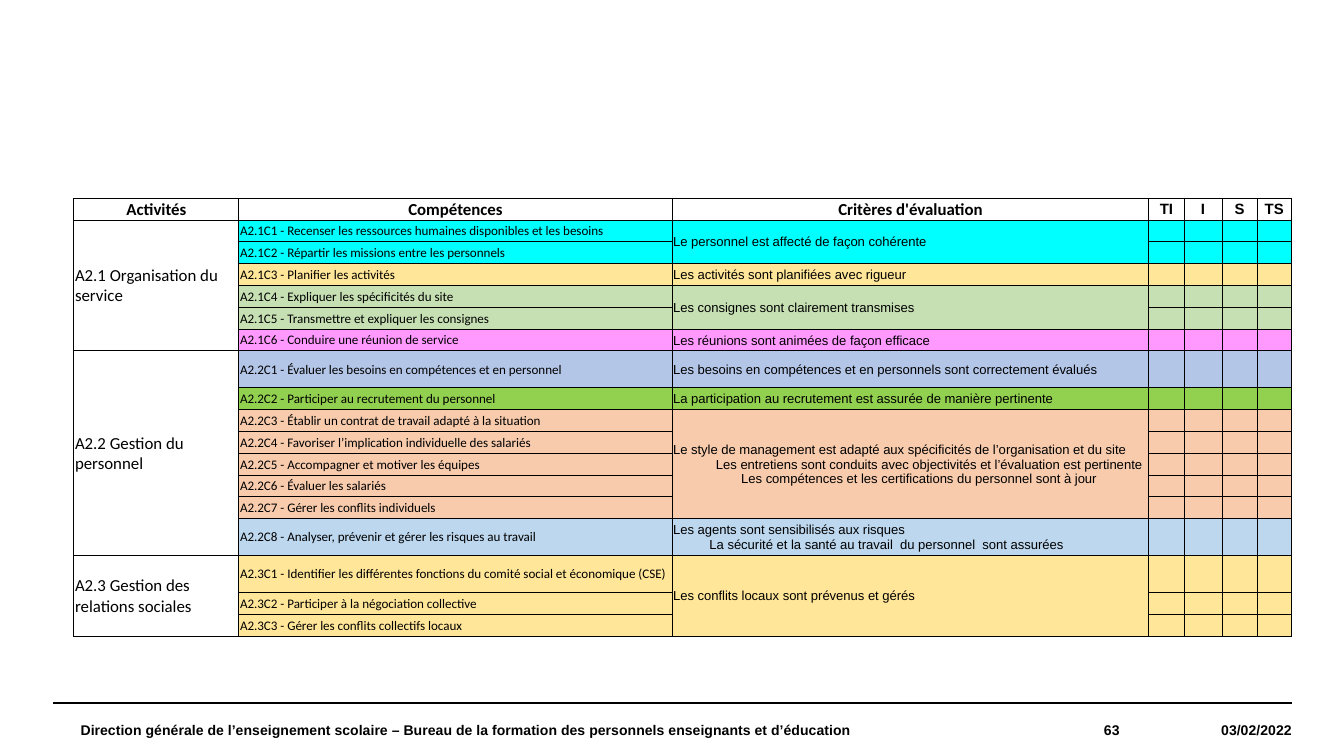
from lxml import etree
from pptx import Presentation
from pptx.dml.color import RGBColor
from pptx.enum.shapes import MSO_CONNECTOR
from pptx.enum.text import MSO_ANCHOR as ANCHOR, PP_ALIGN as ALIGN
from pptx.oxml.ns import qn
from pptx.util import Pt

BLACK = RGBColor(0, 0, 0)
WHITE = RGBColor(255, 255, 255)
CYAN = RGBColor(0x00, 0xFF, 0xFF)
YELLOW = RGBColor(0xFF, 0xE6, 0x99)
SAGE = RGBColor(0xC6, 0xE0, 0xB4)
PINK = RGBColor(0xFF, 0x99, 0xFF)
PERIWINKLE = RGBColor(0xB4, 0xC6, 0xE7)
GREEN = RGBColor(0x92, 0xD0, 0x50)
PEACH = RGBColor(0xF8, 0xCB, 0xAD)
SKY = RGBColor(0xBD, 0xD7, 0xEE)

COLUMNS = [88.4, 232, 255.5, 18.8, 20.4, 18.8, 18.4]
ROW, TALL_ROW = 11.7, 19.8
TALL_ROWS = (7, 14, 15)
HEADERS = ["Activités", "Compétences", "Critères d'évaluation", "TI", "I", "S", "TS"]

# Activity -> groups of (colour, skills, criteria as (indent, text))
ACTIVITIES = [
    ("A2.1 Organisation du service", [
        (CYAN, ["A2.1C1 - Recenser les ressources humaines disponibles et les besoins",
                "A2.1C2 - Répartir les missions entre les personnels"],
         [(0, "Le personnel est affecté de façon cohérente")]),
        (YELLOW, ["A2.1C3 - Planifier les activités"],
         [(0, "Les activités sont planifiées avec rigueur")]),
        (SAGE, ["A2.1C4 - Expliquer les spécificités du site",
                "A2.1C5 - Transmettre et expliquer les consignes"],
         [(0, "Les consignes sont clairement transmises")]),
        (PINK, ["A2.1C6 - Conduire une réunion de service"],
         [(0, "Les réunions sont animées de façon efficace")]),
    ]),
    ("A2.2 Gestion du personnel", [
        (PERIWINKLE, ["A2.2C1 - Évaluer les besoins en compétences et en personnel"],
         [(0, "Les besoins en compétences et en personnels sont correctement évalués")]),
        (GREEN, ["A2.2C2 - Participer au recrutement du personnel"],
         [(0, "La participation au recrutement est assurée de manière pertinente")]),
        (PEACH, ["A2.2C3 - Établir un contrat de travail adapté à la situation",
                 "A2.2C4 - Favoriser l’implication individuelle des salariés",
                 "A2.2C5 - Accompagner et motiver les équipes",
                 "A2.2C6 - Évaluer les salariés",
                 "A2.2C7 - Gérer les conflits individuels"],
         [(0, "Le style de management est adapté aux spécificités de l’organisation et du site"),
          (23, "Les entretiens sont conduits avec objectivités et l’évaluation est pertinente"),
          (36.5, "Les compétences et les certifications du personnel sont à jour")]),
        (SKY, ["A2.2C8 - Analyser, prévenir et gérer les risques au travail"],
         [(0, "Les agents sont sensibilisés aux risques"),
          (19.5, "La sécurité et la santé au travail  du personnel  sont assurées")]),
    ]),
    ("A2.3 Gestion des relations sociales", [
        (YELLOW, ["A2.3C1 - Identifier les différentes fonctions du comité social et "
                  "économique (CSE)",
                  "A2.3C2 - Participer à la négociation collective",
                  "A2.3C3 - Gérer les conflits collectifs locaux"],
         [(0, "Les conflits locaux sont prévenus et gérés")]),
    ]),
]


def write(tf, lines, font, size, bold=False, align=ALIGN.LEFT):
    """Fill a text frame with one paragraph per (indent, text) pair."""
    for i, (indent, text) in enumerate(lines):
        p = tf.add_paragraph() if i else tf.paragraphs[0]
        p.alignment = align
        if indent:
            p._p.get_or_add_pPr().set("marL", str(Pt(indent)))
        r = p.add_run()
        r.text = text
        r.font.name, r.font.size, r.font.bold = font, Pt(size), bold
        r.font.color.rgb = BLACK


def style_cell(cell, color):
    """Set margins, thin black borders, fill and a small empty-line size."""
    cell.margin_left = cell.margin_right = cell.margin_top = Pt(0.6)
    cell.margin_bottom = 0
    cell.vertical_anchor = ANCHOR.MIDDLE
    tcPr = cell._tc.get_or_add_tcPr()
    for side in ("a:lnL", "a:lnR", "a:lnT", "a:lnB"):
        ln = etree.SubElement(tcPr, qn(side), w=str(Pt(0.5)))
        fill = etree.SubElement(ln, qn("a:solidFill"))
        etree.SubElement(fill, qn("a:srgbClr"), val=str(BLACK))
    cell.fill.solid()
    cell.fill.fore_color.rgb = color
    etree.SubElement(cell.text_frame.paragraphs[0]._p, qn("a:endParaRPr"), sz="700")


prs = Presentation()
prs.slide_width, prs.slide_height = Pt(720), Pt(405)
s = prs.slides.add_slide(prs.slide_layouts[6])

# Footer
rule = s.shapes.add_connector(MSO_CONNECTOR.STRAIGHT, Pt(28.3), Pt(376.6), Pt(692), Pt(376.6))
rule.line.color.rgb = BLACK
rule.line.width = Pt(0.8)
etree.SubElement(rule._element.spPr, qn("a:effectLst"))

for left, width, text, align in [
    (43.2, 465, "Direction générale de l’enseignement scolaire – Bureau de la formation "
                "des personnels enseignants et d’éducation", ALIGN.LEFT),
    (493.2, 106.6, "63", ALIGN.RIGHT),
    (599.8, 92.2, "03/02/2022", ALIGN.RIGHT),
]:
    tf = s.shapes.add_textbox(Pt(left), Pt(376.9), Pt(width), Pt(28.1)).text_frame
    tf.margin_left = tf.margin_right = tf.margin_top = tf.margin_bottom = 0
    tf.word_wrap = True
    tf.vertical_anchor = ANCHOR.MIDDLE
    write(tf, [(0, text)], "Arial", 7.5, True, align)

# Skills table
heights = [TALL_ROW if i in TALL_ROWS else ROW for i in range(18)]
table = s.shapes.add_table(len(heights), len(COLUMNS), Pt(39.6), Pt(106.2),
                           Pt(sum(COLUMNS)), Pt(sum(heights))).table
table.first_row = table.horz_banding = False
for column, width in zip(table.columns, COLUMNS):
    column.width = Pt(width)
for row, height in zip(table.rows, heights):
    row.height = Pt(height)

for c, header in enumerate(HEADERS):
    cell = table.cell(0, c)
    style_cell(cell, WHITE)
    font, size = ("Calibri", 9) if c < 3 else ("Arial", 8)
    write(cell.text_frame, [(0, header)], font, size, True, ALIGN.CENTER)
table.cell(0, 2).vertical_anchor = ANCHOR.BOTTOM

row = 1
for activity, groups in ACTIVITIES:
    first = row
    for color, skills, criteria in groups:
        top = row
        for skill in skills:
            for c in range(len(COLUMNS)):
                style_cell(table.cell(row, c), color if c else WHITE)
            write(table.cell(row, 1).text_frame, [(0, skill)], "Calibri", 7)
            row += 1
        if len(skills) > 1:
            table.cell(top, 2).merge(table.cell(row - 1, 2))
        write(table.cell(top, 2).text_frame, criteria, "Arial", 7)
    table.cell(first, 0).merge(table.cell(row - 1, 0))
    write(table.cell(first, 0).text_frame, [(0, activity)], "Calibri", 9)

prs.save("out.pptx")
